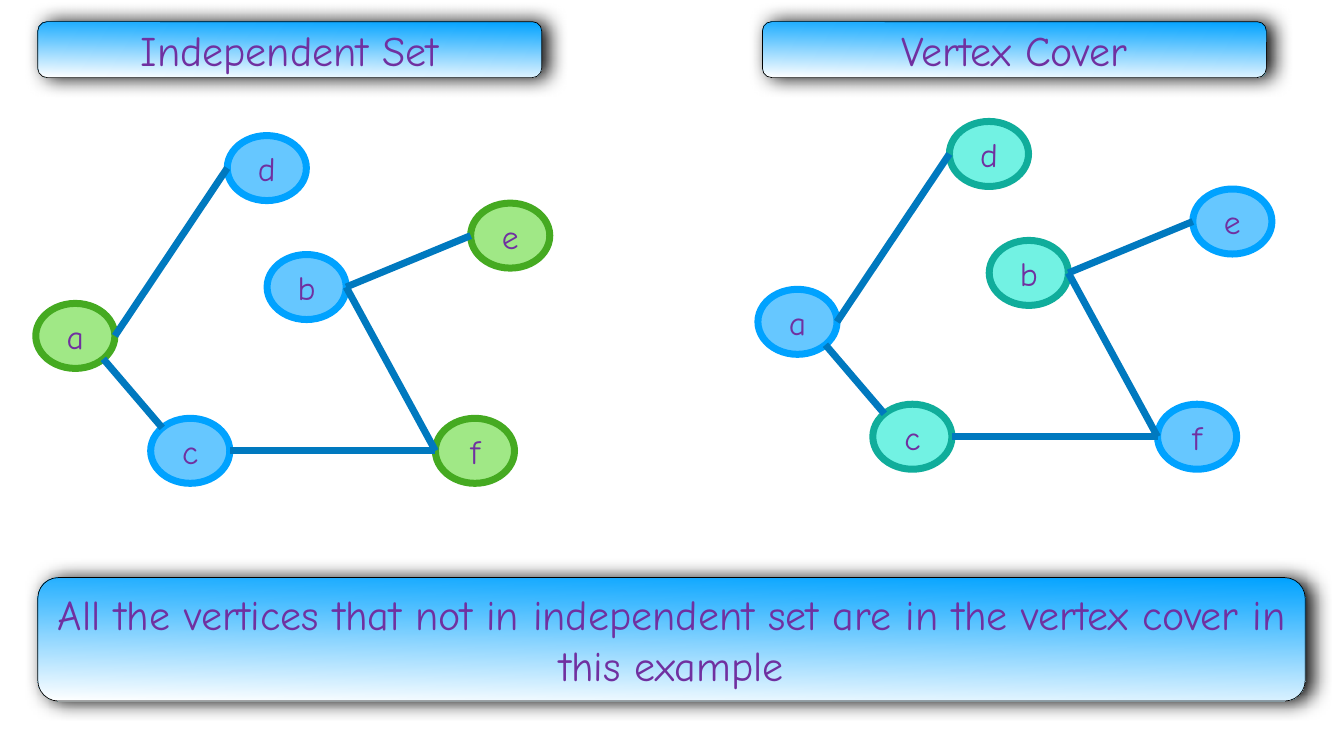
import math

import pptx
import pptx.dml.color
import pptx.enum.shapes
import pptx.enum.text
import pptx.oxml
import pptx.oxml.ns
import pptx.util
from pptx.util import Inches

FONT = "Comic Neue"
COLORS = {
    "text": "7030A0",
    "edge": "0079BF",
    "banner_top": "00A2FF",
    "banner_bottom": "FFFFFF",
    "outline": "000000",
}
# Vertex styles: fill and outline
VERTEX_STYLES = {
    "plain": ("66C7FF", "00A2FF"),
    "independent": ("A0E886", "45AA21"),
    "cover": ("72F2E3", "10AD9B"),
}

VERTEX_W, VERTEX_H = 1.57, 1.29
VERTICES = {
    "a": (0.71, 6.02),
    "d": (4.51, 2.69),
    "b": (5.30, 5.05),
    "c": (2.99, 8.30),
    "e": (9.34, 4.03),
    "f": (8.64, 8.30),
}
# Points on a vertex outline, as angles clockwise from the right
RIGHT, LOWER_RIGHT, LEFT, UPPER_LEFT = 0, 45, 180, 225
EDGES = [
    ("d", LEFT, "a", RIGHT),
    ("c", UPPER_LEFT, "a", LOWER_RIGHT),
    ("e", LEFT, "b", RIGHT),
    ("f", LEFT, "b", RIGHT),
    ("f", LEFT, "c", RIGHT),
]


def rgb(hex_color):
    return pptx.dml.color.RGBColor.from_string(hex_color)


def set_line(line, color, width):
    line.color.rgb = rgb(color)
    line.width = pptx.util.Pt(width)


def add_effects(shape, content=""):
    """Replace the theme's effects with the given ones."""
    shape._element.spPr.append(pptx.oxml.parse_xml(
        f'<a:effectLst {pptx.oxml.ns.nsdecls("a")}>{content}</a:effectLst>'))


def write_label(shape, text, size):
    frame = shape.text_frame
    frame.word_wrap = True
    frame.vertical_anchor = pptx.enum.text.MSO_ANCHOR.MIDDLE
    frame.margin_left = frame.margin_right = Inches(0.06)
    frame.margin_top = frame.margin_bottom = Inches(0.06)
    paragraph = frame.paragraphs[0]
    paragraph.text = text
    paragraph.alignment = pptx.enum.text.PP_ALIGN.CENTER
    paragraph.font.name = FONT
    paragraph.font.size = pptx.util.Pt(size)
    paragraph.font.color.rgb = rgb(COLORS["text"])


def add_banner(slide, text, left, top, width, height):
    banner = slide.shapes.add_shape(
        pptx.enum.shapes.MSO_SHAPE.ROUNDED_RECTANGLE,
        Inches(left), Inches(top), Inches(width), Inches(height))
    banner.fill.gradient()
    banner.fill.gradient_angle = 269
    for stop, name in zip(banner.fill.gradient_stops, ("banner_top", "banner_bottom")):
        stop.color.rgb = rgb(COLORS[name])
    set_line(banner.line, COLORS["outline"], 1)
    add_effects(
        banner,
        f'<a:outerShdw blurRad="{pptx.util.Pt(28)}" dist="{pptx.util.Pt(9)}" dir="0" '
        f'algn="ctr" rotWithShape="0"><a:srgbClr val="{COLORS["outline"]}">'
        '<a:alpha val="97000"/></a:srgbClr></a:outerShdw>')
    write_label(banner, text, 60)


def add_vertex(slide, name, left, top, style):
    fill, outline = VERTEX_STYLES[style]
    vertex = slide.shapes.add_shape(
        pptx.enum.shapes.MSO_SHAPE.OVAL,
        Inches(left), Inches(top), Inches(VERTEX_W), Inches(VERTEX_H))
    vertex.shadow.inherit = False
    vertex.fill.solid()
    vertex.fill.fore_color.rgb = rgb(fill)
    set_line(vertex.line, outline, 10)
    write_label(vertex, name, 48)
    vertex.text_frame.auto_size = pptx.enum.text.MSO_AUTO_SIZE.SHAPE_TO_FIT_TEXT


def outline_point(corner, angle):
    left, top = corner
    turn = math.radians(angle)
    return (Inches(left + VERTEX_W / 2 * (1 + math.cos(turn))),
            Inches(top + VERTEX_H / 2 * (1 + math.sin(turn))))


def add_edge(slide, start, end):
    edge = slide.shapes.add_connector(
        pptx.enum.shapes.MSO_CONNECTOR.STRAIGHT, *start, *end)
    set_line(edge.line, COLORS["edge"], 10)
    add_effects(edge)


def add_graph(slide, dx, dy, marked, marked_style):
    """Draw the graph shifted by (dx, dy), with the marked vertices highlighted."""
    corners = {name: (x + dx, y + dy) for name, (x, y) in VERTICES.items()}
    for name, corner in corners.items():
        add_vertex(slide, name, *corner, marked_style if name in marked else "plain")
    for start, start_angle, end, end_angle in EDGES:
        add_edge(slide, outline_point(corners[start], start_angle),
                 outline_point(corners[end], end_angle))


def main():
    deck = pptx.Presentation()
    deck.slide_width, deck.slide_height = Inches(26.67), Inches(15)
    slide = deck.slides.add_slide(deck.slide_layouts[6])

    # Both graphs: the cover is the complement of the independent set
    independent_set = {"a", "e", "f"}
    vertex_cover = set(VERTICES) - independent_set
    add_graph(slide, 14.33, -0.28, vertex_cover, "cover")
    add_graph(slide, 0, 0, independent_set, "independent")

    # Headings and conclusion
    add_banner(slide, "Independent Set", 0.75, 0.43, 10, 1.11)
    add_banner(slide, "Vertex Cover", 15.13, 0.43, 10, 1.11)
    add_banner(slide, "All the vertices that not in independent set are in "
               "the vertex cover in this example", 0.75, 11.46, 25.15, 2.45)

    deck.save("out.pptx")


if __name__ == "__main__":
    main()
